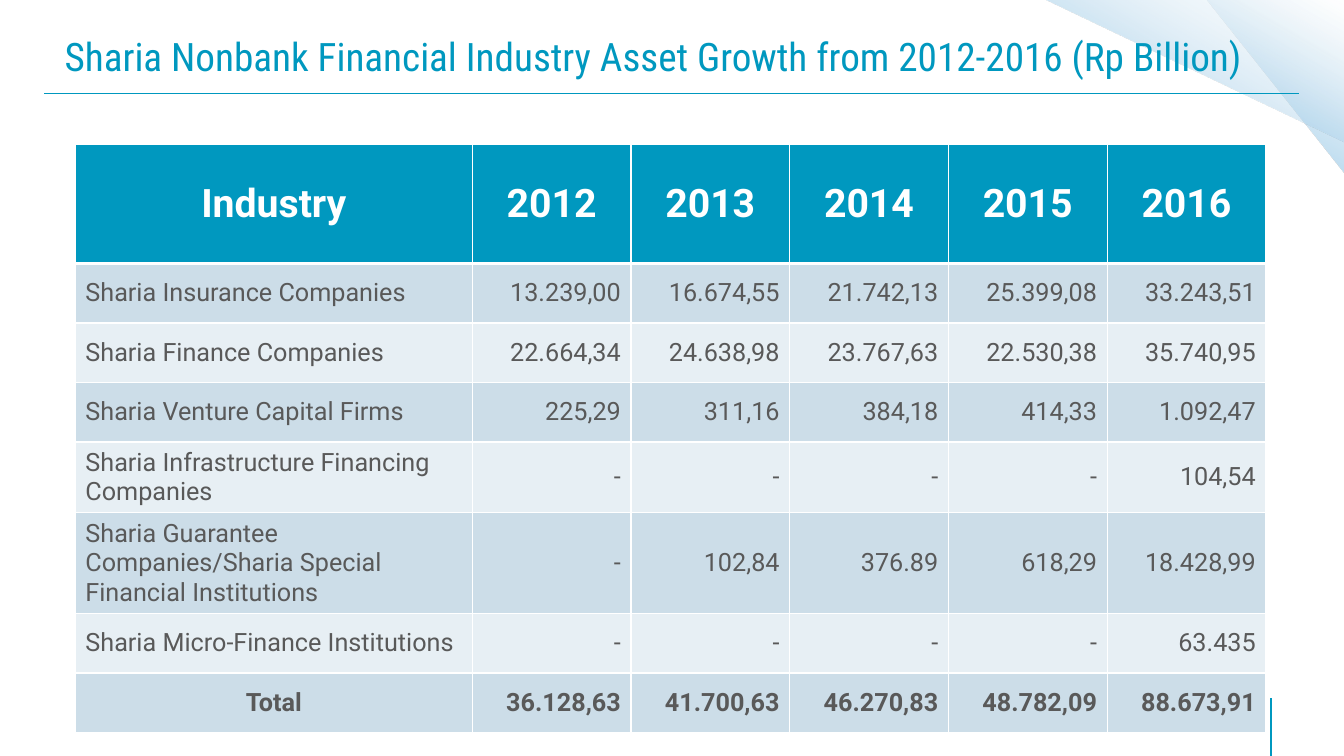
from lxml.etree import SubElement
from pptx import Presentation
from pptx.dml.color import RGBColor
from pptx.enum.shapes import MSO_CONNECTOR, MSO_SHAPE
from pptx.enum.text import MSO_ANCHOR, PP_ALIGN
from pptx.oxml.ns import qn
from pptx.util import Cm, Pt

COLORS = {
    "teal": "0098BF",
    "white": "FFFFFF",
    "text": "595959",
    "band_dark": "CCDDE8",
    "band_light": "E7EFF4",
}
GRADIENT = [(0, "8FC8E8", 100), (50, "A4CEE9", 44), (100, "DEEDF6", 0)]
ROWS = [
    ["Industry", "2012", "2013", "2014", "2015", "2016"],
    ["Sharia Insurance Companies", "13.239,00", "16.674,55", "21.742,13", "25.399,08", "33.243,51"],
    ["Sharia Finance Companies", "22.664,34", "24.638,98", "23.767,63", "22.530,38", "35.740,95"],
    ["Sharia Venture Capital Firms", "225,29", "311,16", "384,18", "414,33", "1.092,47"],
    ["Sharia Infrastructure Financing Companies", "-", "-", "-", "-", "104,54"],
    ["Sharia Guarantee Companies/Sharia Special Financial Institutions",
     "-", "102,84", "376.89", "618,29", "18.428,99"],
    ["Sharia Micro-Finance Institutions", "-", "-", "-", "-", "63.435"],
    ["Total", "36.128,63", "41.700,63", "46.270,83", "48.782,09", "88.673,91"],
]


def add_run(paragraph, text, font_name, size, color, bold=False):
    run = paragraph.add_run()
    run.text = text
    run.font.name = font_name
    run.font.size = Pt(size)
    run.font.bold = bold
    run.font.color.rgb = RGBColor.from_string(COLORS[color])


def set_borders(cell, widths):
    """Draw white cell borders; widths maps each XML edge tag to points."""
    properties = cell._tc.get_or_add_tcPr()
    for position, (edge, width) in enumerate(widths.items()):
        line = SubElement(properties, qn(f"a:{edge}"), w=str(Pt(width)))
        fill = SubElement(line, qn("a:solidFill"))
        SubElement(fill, qn("a:srgbClr"), val=COLORS["white"])
        properties.insert(position, line)


presentation = Presentation()
presentation.slide_width = Cm(33.87)
presentation.slide_height = Cm(19.05)
slide = presentation.slides.add_slide(presentation.slide_layouts[6])

# Corner triangles
for left, width, height in [(30.41, 3.46, 4.34), (26.32, 7.58, 3.6)]:
    triangle = slide.shapes.add_shape(
        MSO_SHAPE.RIGHT_TRIANGLE, Cm(left), Cm(0), Cm(width), Cm(height))
    triangle.rotation = 180
    triangle.shadow.inherit = False
    triangle.line.fill.background()
    triangle.fill.gradient()
    triangle.fill.gradient_angle = 240
    stops = triangle._element.spPr.find(qn("a:gradFill")).find(qn("a:gsLst"))
    for stop in list(stops):
        stops.remove(stop)
    for position, color, opacity in GRADIENT:
        stop = SubElement(stops, qn("a:gs"), pos=str(position * 1000))
        stop_color = SubElement(stop, qn("a:srgbClr"), val=color)
        SubElement(stop_color, qn("a:alpha"), val=str(opacity * 1000))

# Title rule and footer rule
for ends in [(1.12, 2.36, 32.74, 2.36), (32.03, 19.05, 32.03, 17.6)]:
    rule = slide.shapes.add_connector(MSO_CONNECTOR.STRAIGHT, *map(Cm, ends))
    rule.line.width = Pt(1)
    rule.line.color.rgb = RGBColor.from_string(COLORS["teal"])
    SubElement(rule._element.spPr, qn("a:effectLst"))

# Title
title = slide.shapes.add_textbox(Cm(1.17), Cm(0.36), Cm(31.01), Cm(2.08))
frame = title.text_frame
frame.word_wrap = True
frame.vertical_anchor = MSO_ANCHOR.MIDDLE
frame.margin_left = frame.margin_right = Cm(0.46)
frame.margin_top = frame.margin_bottom = Cm(0.23)
add_run(frame.paragraphs[0],
        "Sharia Nonbank Financial Industry Asset Growth from 2012-2016 (Rp Billion)",
        "Roboto Condensed", 28, "teal")

# Asset table
table = slide.shapes.add_table(
    len(ROWS), len(ROWS[0]), Cm(1.9), Cm(3.64), Cm(30), Cm(14.8)).table
for index, column in enumerate(table.columns):
    column.width = Cm(10 if index == 0 else 4)
for row_index, values in enumerate(ROWS):
    is_header = row_index == 0
    is_total = row_index == len(ROWS) - 1
    table.rows[row_index].height = Cm(3 if is_header else 1.5)
    if is_header:
        fill_color = "teal"
    else:
        fill_color = "band_dark" if row_index % 2 else "band_light"
    for column_index, value in enumerate(values):
        cell = table.cell(row_index, column_index)
        cell.vertical_anchor = MSO_ANCHOR.MIDDLE
        cell.fill.solid()
        cell.fill.fore_color.rgb = RGBColor.from_string(COLORS[fill_color])
        set_borders(cell, {"lnL": 1, "lnR": 1, "lnT": 3 if row_index == 1 else 1,
                           "lnB": 3 if is_header else 1})
        paragraph = cell.text_frame.paragraphs[0]
        if is_header or (is_total and column_index == 0):
            paragraph.alignment = PP_ALIGN.CENTER
        else:
            paragraph.alignment = PP_ALIGN.RIGHT if column_index else PP_ALIGN.LEFT
        add_run(paragraph, value, "Roboto", 28 if is_header else 18,
                "white" if is_header else "text", is_header or is_total)

presentation.save("out.pptx")
